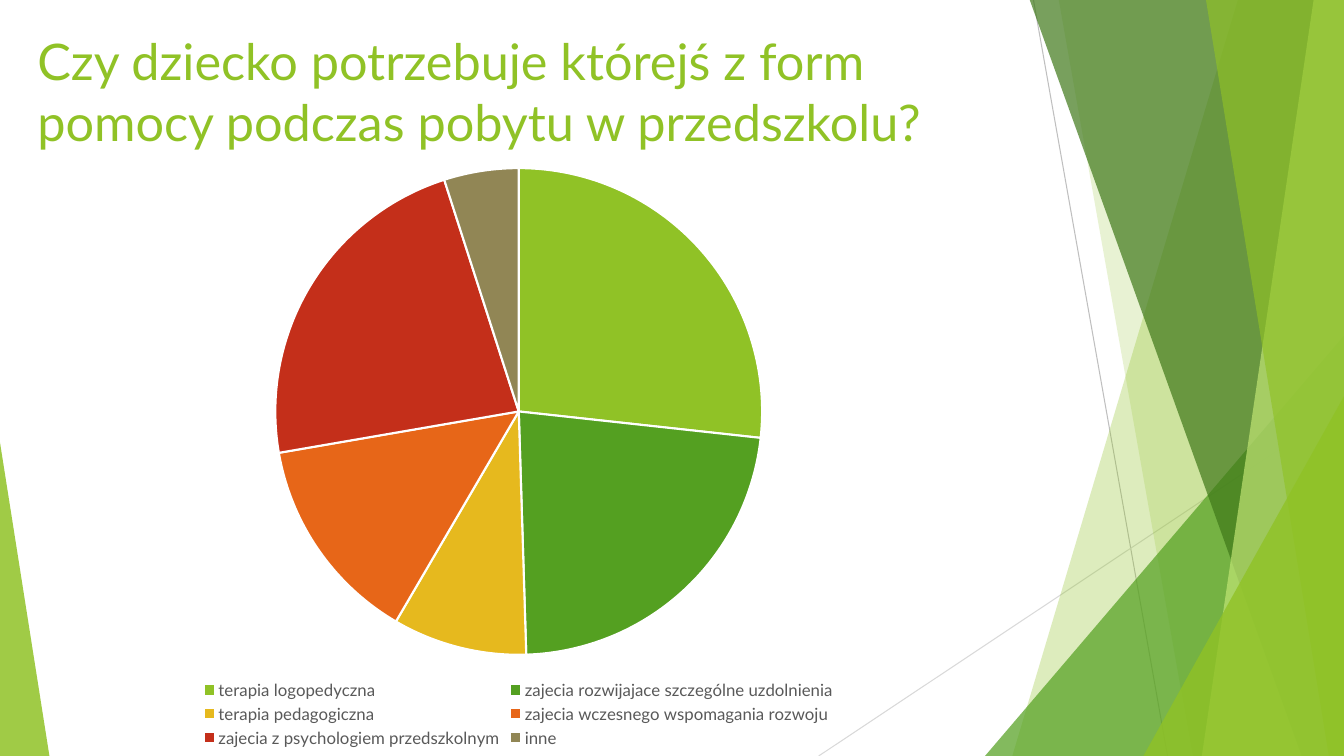
from typing import NamedTuple

from lxml.etree import SubElement
from pptx import Presentation
from pptx.chart.data import CategoryChartData as ChartData
from pptx.dml.color import RGBColor as Rgb
from pptx.enum.chart import XL_CHART_TYPE as ChartType, XL_LEGEND_POSITION as Place
from pptx.enum.shapes import MSO_CONNECTOR as Link, MSO_SHAPE as Kind
from pptx.enum.text import MSO_ANCHOR as Anchor, MSO_AUTO_SIZE as Fit, PP_ALIGN as Align
from pptx.oxml.ns import qn
from pptx.shapes.autoshape import Shape
from pptx.slide import Slide
from pptx.util import Inches, Pt

WIDE, HIGH = 13.33, 7.5
TOP = -0.01
FONT = "Lato"
HEX = {
    "lime": "90C226", "green": "54A021", "forest": "3F7819", "pale": "C0E474",
    "gold": "E6B91E", "orange": "E76618", "red": "C42F1A", "olive": "918655",
    "grey": "BFBFBF", "mist": "D9D9D9", "text": "595959", "white": "FFFFFF",
}


class Ray(NamedTuple):
    start: tuple[float, float]
    end: tuple[float, float]
    color: str


class Band(NamedTuple):
    head: float
    foot: float
    color: str
    alpha: int


class Wedge(NamedTuple):
    left: float
    top: float
    width: float
    peak: float
    color: str
    alpha: int


class Slice(NamedTuple):
    label: str
    value: int
    color: str


DECOR = [
    Ray((10.25, 0), (11.58, HIGH), "grey"),
    Ray((WIDE, 4.03), (8.12, HIGH), "mist"),
    Band(12.28, 10.04, "lime", 30),
    Band(10.5, 11.83, "lime", 20),
    Wedge(9.77, 3.33, 3.56, 1, "green", 72),
    Band(10.21, 12.91, "forest", 70),
    Band(13.03, 11.92, "pale", 70),
    Band(11.96, 13.18, "lime", 65),
    Wedge(11.34, 3.93, 1.99, 1, "lime", 80),
    Wedge(0, 4.39, 0.49, 0, "lime", 85),
]

SLICES = [
    Slice("terapia logopedyczna", 27, "lime"),
    Slice("zajecia rozwijajace szczególne uzdolnienia", 23, "green"),
    Slice("terapia pedagogiczna", 9, "gold"),
    Slice("zajecia wczesnego wspomagania rozwoju", 14, "orange"),
    Slice("zajecia z psychologiem przedszkolnym", 23, "red"),
    Slice("inne", 5, "olive"),
]


def tint(name: str) -> Rgb:
    return Rgb.from_string(HEX[name])


def paint(shape: Shape, color: str, alpha: int) -> None:
    """Fill without outline or shadow; alpha is percent opacity."""
    shape.shadow.inherit = False
    shape.line.fill.background()
    shape.fill.solid()
    shape.fill.fore_color.rgb = tint(color)
    tone = shape._element.spPr.find(qn("a:solidFill")).find(qn("a:srgbClr"))
    SubElement(tone, qn("a:alpha")).set("val", str(alpha * 1000))


def add_ray(slide: Slide, ray: Ray) -> None:
    ends = [Inches(n) for n in (*ray.start, *ray.end)]
    line = slide.shapes.add_connector(Link.STRAIGHT, *ends)
    line.line.color.rgb = tint(ray.color)
    line.line.width = Pt(0.75)
    SubElement(line._element.spPr, qn("a:effectLst"))


def add_band(slide: Slide, band: Band) -> None:
    """Draw a full-height band from a slanted left edge to the slide's right edge."""
    spots = [(band.head, TOP), (WIDE, TOP), (WIDE, HIGH), (band.foot, HIGH)]
    first, *rest = [(Inches(x), Inches(y)) for x, y in spots]
    form = slide.shapes.build_freeform(*first)
    form.add_line_segments(rest, close=True)
    paint(form.convert_to_shape(), band.color, band.alpha)


def add_wedge(slide: Slide, wedge: Wedge) -> None:
    """Draw a triangle that stands on the slide's bottom edge."""
    box = (wedge.left, wedge.top, wedge.width, HIGH - wedge.top)
    shape = slide.shapes.add_shape(Kind.ISOSCELES_TRIANGLE, *map(Inches, box))
    shape.adjustments[0] = wedge.peak
    paint(shape, wedge.color, wedge.alpha)


def set_title(slide: Slide, text: str) -> None:
    title = slide.shapes.title
    title.left, title.top = Inches(0.37), Inches(0.05)
    title.width, title.height = Inches(9.9), Inches(1.7)
    frame = title.text_frame
    frame.word_wrap = True
    frame.auto_size = Fit.NONE
    frame.vertical_anchor = Anchor.MIDDLE
    frame.margin_left = frame.margin_right = 0
    frame.margin_top = frame.margin_bottom = 0
    para = frame.paragraphs[0]
    para.alignment = Align.LEFT
    run = para.add_run()
    run.text = text
    run.font.name = FONT
    run.font.size = Pt(36)
    run.font.color.rgb = tint("lime")


def add_pie(slide: Slide, slices: list[Slice]) -> None:
    data = ChartData()
    data.categories = [part.label for part in slices]
    data.add_series("Series 1", [part.value for part in slices])
    box = map(Inches, (0.7, 1.53, 8.89, 5.93))
    chart = slide.shapes.add_chart(ChartType.PIE, *box, data).chart
    chart.has_title = False
    chart.font.name = FONT
    chart.font.size = Pt(10)
    chart.has_legend = True
    legend = chart.legend
    legend.position = Place.BOTTOM
    legend.include_in_layout = False
    legend.font.name = FONT
    legend.font.size = Pt(12)
    legend.font.color.rgb = tint("text")
    plot = chart.plots[0]
    plot.vary_by_categories = True
    for i, part in enumerate(slices):
        style = plot.series[0].points[i].format
        style.fill.solid()
        style.fill.fore_color.rgb = tint(part.color)
        style.line.color.rgb = tint("white")
        style.line.width = Pt(1.5)


def main() -> None:
    deck = Presentation()
    deck.slide_width, deck.slide_height = Inches(WIDE), Inches(HIGH)
    slide = deck.slides.add_slide(deck.slide_layouts[5])
    draw = {Ray: add_ray, Band: add_band, Wedge: add_wedge}
    for item in DECOR:
        draw[type(item)](slide, item)
    set_title(slide, "Czy dziecko potrzebuje którejś z form pomocy podczas pobytu w przedszkolu?")
    add_pie(slide, SLICES)
    deck.save("out.pptx")


if __name__ == "__main__":
    main()
